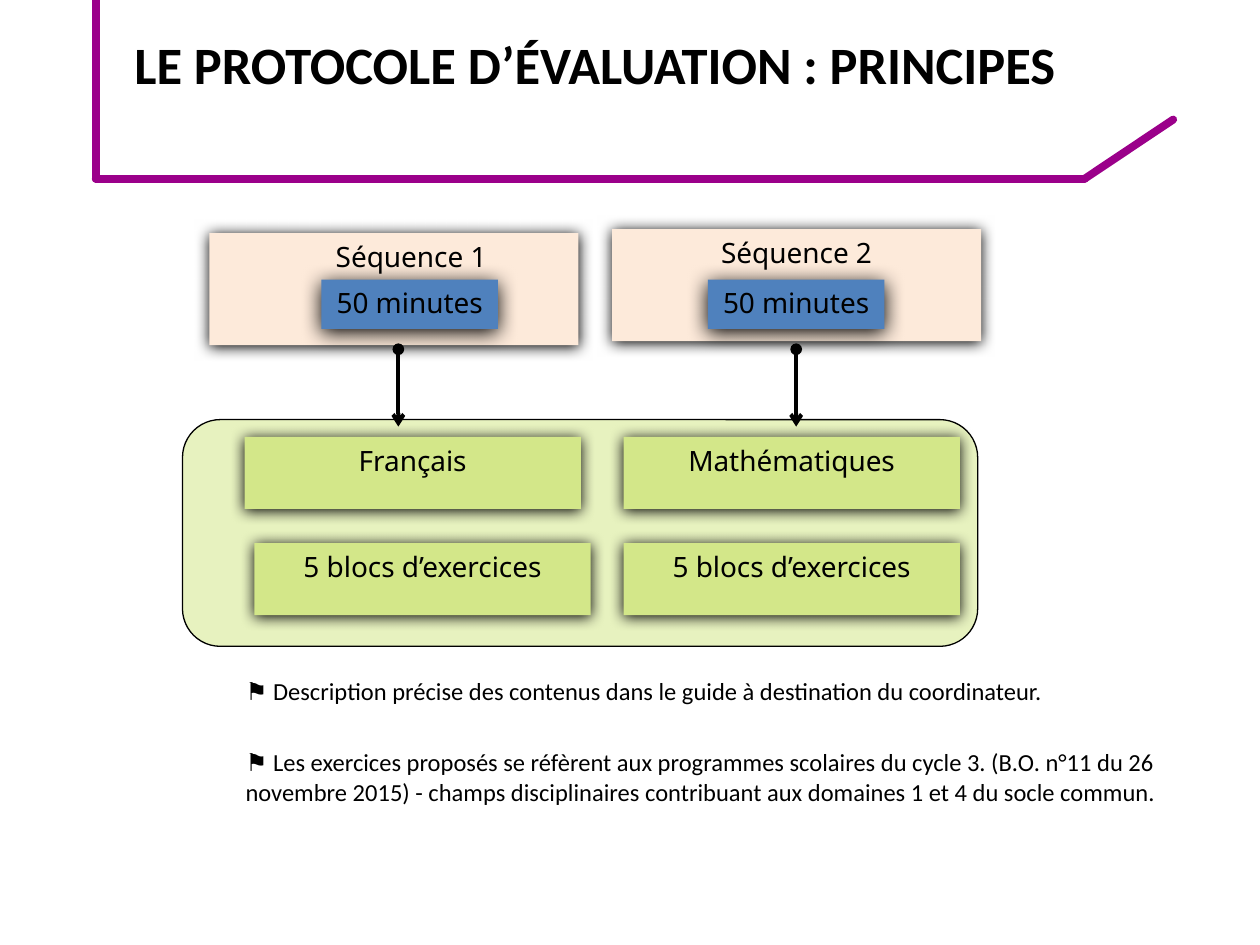
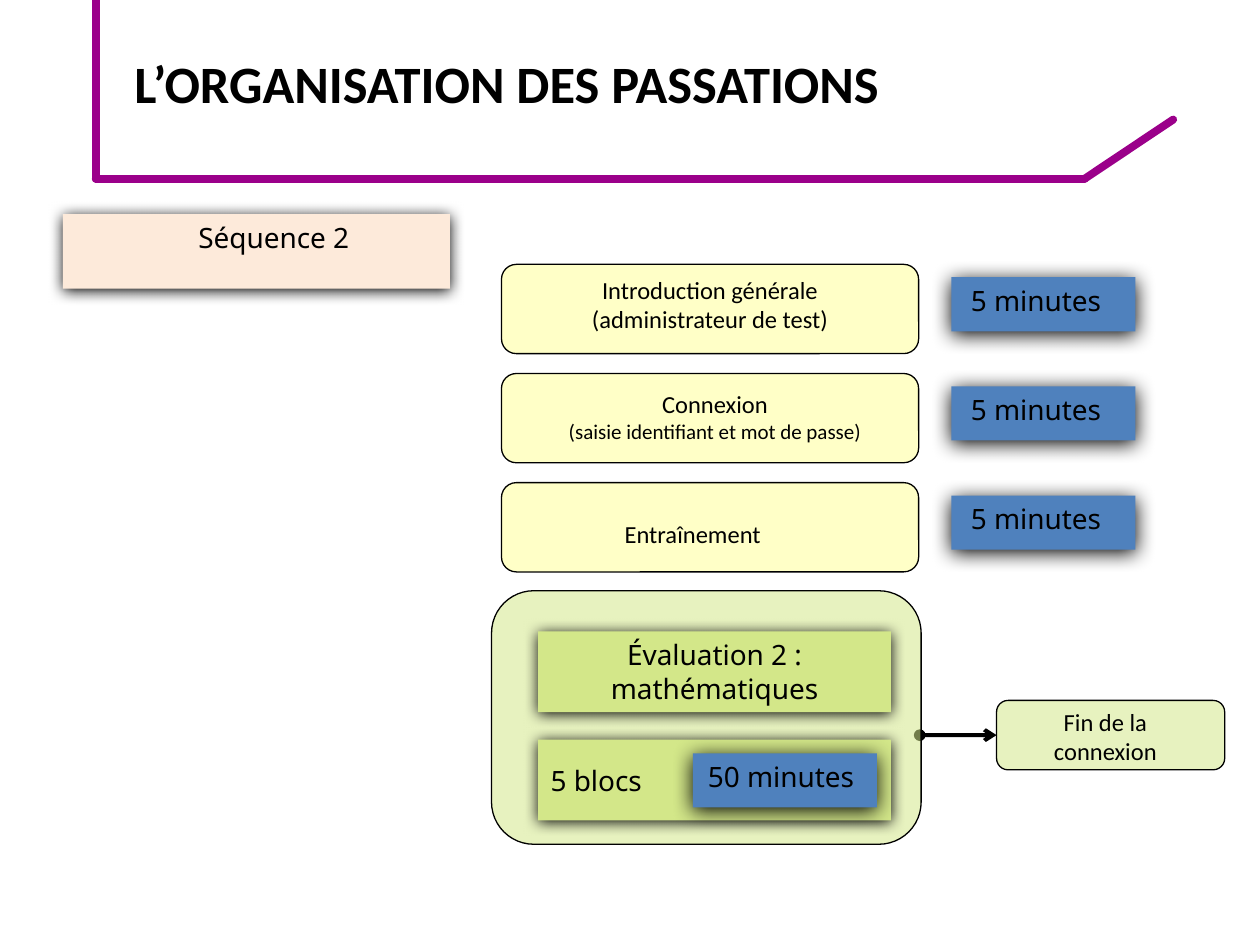
import pptx
import pptx.dml.color
import pptx.enum.shapes
import pptx.enum.text
import pptx.oxml
import pptx.oxml.ns
import pptx.util

Cm = pptx.util.Cm
Pt = pptx.util.Pt
RGBColor = pptx.dml.color.RGBColor
Shape = pptx.enum.shapes.MSO_SHAPE
Align = pptx.enum.text.PP_ALIGN
Anchor = pptx.enum.text.MSO_ANCHOR

PURPLE = RGBColor(0x9B, 0x00, 0x8A)
BLACK = RGBColor(0x00, 0x00, 0x00)
PEACH = RGBColor(0xFD, 0xEA, 0xDA)
BLUE = RGBColor(0x4F, 0x81, 0xBD)
GREEN = RGBColor(0xD3, 0xE7, 0x89)
YELLOW = RGBColor(0xFF, 0xFF, 0x99)

BODY_FONT = "Calibri"
LABEL_FONT = "Noto Sans"


def write(box, text, font=BODY_FONT, size=14, bold=False, align=Align.CENTER,
          anchor=Anchor.TOP, shift=0.0):
    """Add a paragraph to a box; shift moves centred text sideways, in cm."""
    frame = box.text_frame
    frame.word_wrap = True
    frame.vertical_anchor = anchor
    frame.margin_left = Cm(0.25 + max(2 * shift, 0))
    frame.margin_right = Cm(0.25 + max(-2 * shift, 0))
    para = frame.add_paragraph() if frame.text else frame.paragraphs[0]
    para.alignment = align
    span = para.add_run()
    span.text = text
    span.font.name = font
    span.font.size = Pt(size)
    span.font.bold = bold
    span.font.color.rgb = BLACK


def add_xml(parent, tag, content="", **attributes):
    """Append a DrawingML element to a parent element."""
    listed = " ".join(f'{name}="{value}"' for name, value in attributes.items())
    namespace = pptx.oxml.ns.nsdecls("a")
    parent.append(pptx.oxml.parse_xml(
        f"<a:{tag} {namespace} {listed}>{content}</a:{tag}>"))


def find(element, tag):
    """Return the first descendant with the given DrawingML tag."""
    return next(element.iter(pptx.oxml.ns.qn(f"a:{tag}")))


class Style:
    """Draws the elements of the deck on the current page."""

    def __init__(self):
        """Open a deck and put the purple frame on its blank layout."""
        self.deck = pptx.Presentation()
        self.deck.slide_width = Cm(25.4)
        self.deck.slide_height = Cm(19.05)
        self.layout = self.deck.slide_layouts[6]
        self.page = None

    def add_page(self, title, top):
        """Start a page with its title."""
        self.page = self.deck.slides.add_slide(self.layout)
        if len(self.deck.slides) == 1:
            self.frame_layout()
        box = self.text_box(2.46, top, 20.1, 1.55)
        write(box, title, size=30, bold=True, align=Align.LEFT)

    def frame_layout(self):
        """Draw the frame lines and move them to the shared layout."""
        corners = [(1.93, 0), (1.93, 3.6), (21.87, 3.6), (23.65, 2.41)]
        for start, end in zip(corners, corners[1:]):
            line = self.line(start, end, PURPLE, 4.5)
            find(line.element, "ln").set("cap", "rnd")
            self.layout.shapes.element.append(line.element)

    def line(self, start, end, color, width):
        """Draw a straight line without shadow."""
        line = self.page.shapes.add_connector(
            pptx.enum.shapes.MSO_CONNECTOR.STRAIGHT,
            *(Cm(length) for length in (*start, *end)))
        line.line.color.rgb = color
        line.line.width = Pt(width)
        add_xml(line.element.spPr, "effectLst")
        return line

    def arrow(self, start, end):
        """Draw a black arrow that starts with a dot."""
        line = self.line(start, end, BLACK, 2.25)
        outline = find(line.element, "ln")
        add_xml(outline, "headEnd", type="oval")
        add_xml(outline, "tailEnd", type="arrow")
        return line

    def text_box(self, left, top, width, height):
        """Add an empty text box."""
        return self.page.shapes.add_textbox(Cm(left), Cm(top), Cm(width), Cm(height))

    def shape(self, preset, color, left, top, width, height):
        """Add a filled preset shape."""
        box = self.page.shapes.add_shape(
            preset, Cm(left), Cm(top), Cm(width), Cm(height))
        box.shadow.inherit = False
        box.fill.solid()
        box.fill.fore_color.rgb = color
        return box

    def panel(self, color, left, top, width, height):
        """Add a translucent rounded panel with a thin outline."""
        box = self.shape(Shape.ROUNDED_RECTANGLE, color, left, top, width, height)
        box.line.color.rgb = BLACK
        box.line.width = Pt(0.75)
        add_xml(find(box.element, "srgbClr"), "alpha", val=54000)
        return box

    def label(self, text, color, left, top, width, height, blur=8.5, distance=1,
              **text_format):
        """Add a rectangle with a shadow and a label."""
        box = self.shape(Shape.RECTANGLE, color, left, top, width, height)
        box.line.fill.background()
        add_xml(find(box.element, "effectLst"), "outerShdw",
                f'<a:srgbClr val="{BLACK}"/>', blurRad=int(Pt(blur)),
                dist=int(Pt(distance)), dir=5400000, algn="ctr", rotWithShape=0)
        write(box, text, font=LABEL_FONT, size=16, **text_format)

    def duration(self, text, left, top, width=3.71, height=1.09, shift=0.0):
        """Add a blue label that tells how long a step takes."""
        self.label(text, BLUE, left, top, width, height, blur=12, distance=2,
                   shift=shift)


def draw_principles(style):
    """Draw the two sequences and the subjects they assess."""
    style.add_page("LE PROTOCOLE D’ÉVALUATION : PRINCIPES", 0.53)
    style.panel(GREEN, 3.68, 8.46, 16.03, 4.57)
    sequences = [
        ("Séquence 1", 4.22, 4.7, 0.35, 6.48, 8.03, "Français", 4.93, 5.13),
        ("Séquence 2", 12.34, 4.62, 0, 14.27, 16.05, "Mathématiques", 12.57, 12.57),
    ]
    for (name, left, top, shift, duration_left, arrow_x,
         subject, subject_left, blocks_left) in sequences:
        style.label(name, PEACH, left, top, 7.44, 2.26, shift=shift)
        style.duration("50 minutes", duration_left, 5.64, 3.56, 0.99)
        style.arrow((arrow_x, 7.04), (arrow_x, 8.6))
        style.label(subject, GREEN, subject_left, 8.81, 6.78, 1.45)
        style.label("5 blocs d’exercices", GREEN, blocks_left, 10.95, 6.78, 1.45)

    notes = [
        (13.51, 0.84, "⚑ Description précise des contenus dans le guide à "
         "destination du coordinateur."),
        (14.94, 1.45, "⚑ Les exercices proposés se réfèrent aux programmes "
         "scolaires du cycle 3. (B.O. n°11 du 26 novembre 2015) - champs "
         "disciplinaires contribuant aux domaines 1 et 4 du socle commun."),
    ]
    for top, height, text in notes:
        write(style.text_box(4.7, top, 19.81, height), text, align=Align.LEFT)


def draw_sessions(style):
    """Draw the steps of the second sequence with their durations."""
    style.add_page("L’ORGANISATION DES PASSATIONS", 0.91)
    style.label("Séquence 2", PEACH, 1.27, 4.32, 7.8, 1.5, shift=0.35)

    steps = []
    for index in range(3):
        offset = 2.2 * index
        steps.append(style.panel(YELLOW, 10.11, 5.33 + offset, 8.41, 1.8))
        style.duration("5 minutes", 19.18, 5.59 + offset, shift=-0.15)
    write(steps[0], "Introduction générale")
    write(steps[0], "(administrateur de test)")
    connection = style.text_box(10.49, 7.72, 7.85, 1.35)
    write(connection, "Connexion")
    write(connection, "(saisie identifiant et mot de passe)", size=12)
    write(style.text_box(10.64, 10.34, 6.65, 0.84), "Entraînement")

    ending = style.panel(GREEN, 20.09, 14.12, 4.6, 1.4)
    write(style.text_box(20.29, 14.12, 3.99, 1.45), "Fin de la connexion")
    style.arrow((18.54, 14.82), (20.09, 14.82)).end_connect(ending, 1)

    style.panel(GREEN, 9.91, 11.91, 8.66, 5.11)
    style.label("Évaluation 2 : mathématiques", GREEN, 10.85, 12.73, 7.11, 1.63)
    style.label("5 blocs", GREEN, 10.85, 14.91, 7.11, 1.63,
                align=Align.LEFT, anchor=Anchor.MIDDLE)
    style.duration("50 minutes", 13.97, 15.19, shift=-0.08)


def main():
    """Build and save the deck."""
    style = Style()
    draw_principles(style)
    draw_sessions(style)
    style.deck.save("out.pptx")


if __name__ == "__main__":
    main()
